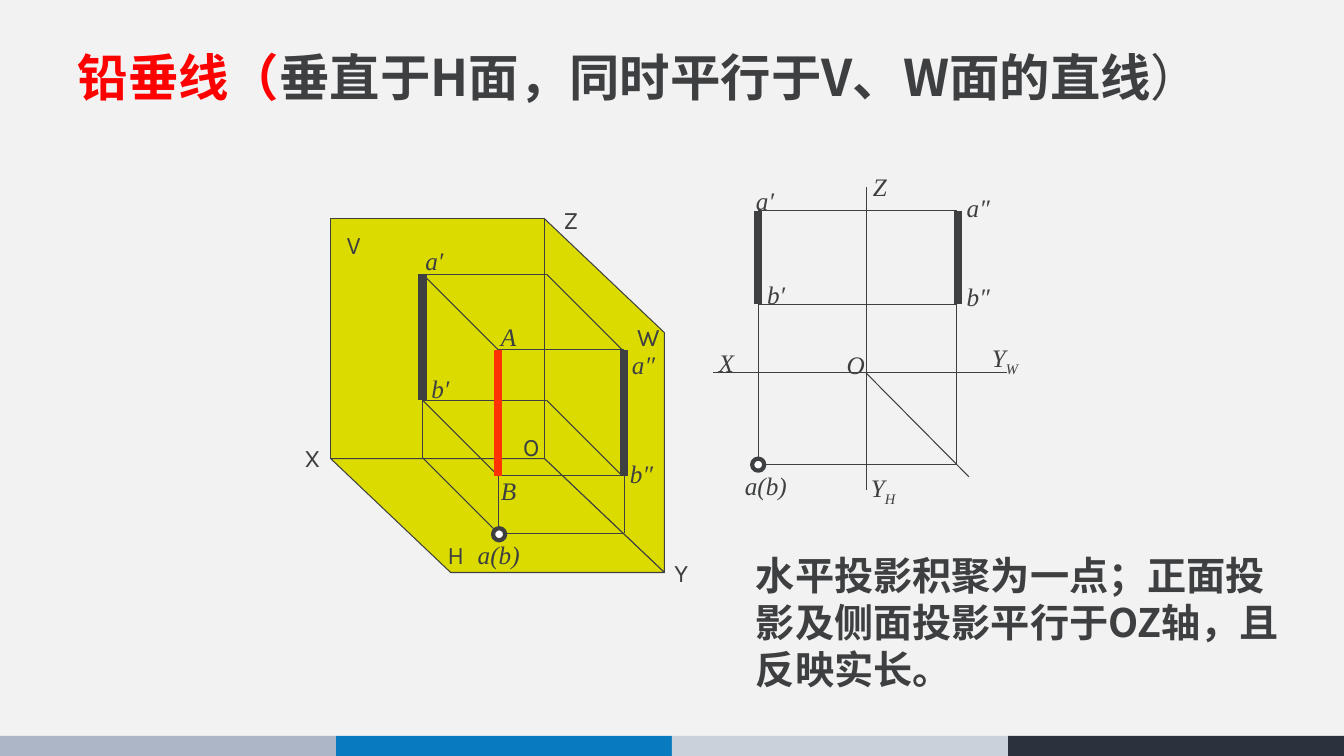
from lxml.etree import SubElement
from pptx import Presentation
from pptx.dml.color import RGBColor
from pptx.enum.shapes import MSO_CONNECTOR, MSO_SHAPE
from pptx.enum.text import MSO_ANCHOR, MSO_AUTO_SIZE, PP_ALIGN
from pptx.oxml.ns import qn
from pptx.util import Inches, Pt

INK, RED, YELLOW, WHITE = "3D3F41", "FF0000", "DBDB00", "FFFFFF"
SANS, SERIF, HAN = "Karla", "Times New Roman", "Noto Sans CJK SC"


def color(code):
    """Turn a hex string into a colour."""
    return RGBColor.from_string(code)


def add_run(para, text, size=18, font=SANS, ink=INK, bold=False, italic=False, base=0):
    """Add a formatted run to a paragraph."""
    run = para.add_run()
    run.text = text
    face = run.font
    face.size, face.name, face.bold, face.italic = Pt(size), font, bold, italic
    face.color.rgb = color(ink)
    props = run._r.get_or_add_rPr()
    SubElement(props, qn("a:ea")).set("typeface", font)
    if base:
        props.set("baseline", str(base * 1000))


def set_frame(frame, pad=0.05, pitch=None):
    """Prepare a wrapped, top-left text frame and return its paragraph."""
    frame.word_wrap = True
    frame.auto_size = MSO_AUTO_SIZE.NONE
    frame.vertical_anchor = MSO_ANCHOR.TOP
    frame.margin_left = frame.margin_right = Inches(0.1)
    frame.margin_top, frame.margin_bottom = Inches(pad), Inches(0.05)
    para = frame.paragraphs[0]
    para.alignment = PP_ALIGN.LEFT
    if pitch:
        para.line_spacing = Pt(pitch)
    return para


def add_label(slide, x, y, text, sub="", width=0.86, **style):
    """Place a one-line label with an optional subscript."""
    box = slide.shapes.add_textbox(Inches(x), Inches(y), Inches(width), Inches(0.4))
    para = set_frame(box.text_frame)
    add_run(para, text, **style)
    if sub:
        add_run(para, sub, base=-25, **style)


def add_form(slide, kind, x, y, width, height, fill, line=None, weight=0.75):
    """Place a flat preset shape."""
    form = slide.shapes.add_shape(kind, Inches(x), Inches(y), Inches(width), Inches(height))
    form.shadow.inherit = False
    form.fill.solid()
    form.fill.fore_color.rgb = color(fill)
    if line:
        form.line.color.rgb = color(line)
        form.line.width = Pt(weight)
    else:
        form.line.fill.background()
    return form


def add_line(slide, left, top, start, end, ink=INK, weight=0.75):
    """Draw a line between two points relative to left and top."""
    line = slide.shapes.add_connector(
        MSO_CONNECTOR.STRAIGHT, Inches(left + start[0]), Inches(top + start[1]),
        Inches(left + end[0]), Inches(top + end[1]))
    line.line.color.rgb = color(ink)
    line.line.width = Pt(weight)
    SubElement(line._element.spPr, qn("a:effectLst"))


def add_dot(slide, x, y):
    """Draw the ring that marks a point view, centred on x and y."""
    add_form(slide, MSO_SHAPE.OVAL, x - 0.06, y - 0.06, 0.12, 0.12, WHITE, INK, 3)


def add_band(slide, left, top, width, height):
    """Draw the four-colour foot band."""
    step = width / 4
    for i, fill in enumerate(("ADB6C7", "087AC0", "CBD1DB", "2A323E")):
        add_form(slide, MSO_SHAPE.RECTANGLE, left + i * step, top, step, height, fill)


def add_title(slide, left, top, width, height):
    """Fill and place the slide title."""
    title = slide.shapes.title
    title.left, title.top = Inches(left), Inches(top)
    title.width, title.height = Inches(width), Inches(height)
    para = set_frame(title.text_frame, 0.11, 42)
    for text, ink, bold in (("铅垂线（", RED, True),
                            ("垂直于H面，同时平行于V、W面的直线", INK, True),
                            ("）", INK, False)):
        add_run(para, text, size=36, font=HAN, ink=ink, bold=bold)


def add_faces(slide, left, top, width, height, run, drop):
    """Draw the V, H and W planes, with the depth edge going run and drop."""
    side = height + drop
    face = add_form(slide, MSO_SHAPE.PARALLELOGRAM, left + width + (run - side) / 2,
                    top + (side - run) / 2, side, run, YELLOW, INK)
    face.rotation = 270
    face.adjustments[0] = drop / run
    floor = add_form(slide, MSO_SHAPE.PARALLELOGRAM, left, top + height,
                     width + run, drop, YELLOW, INK)
    floor.adjustments[0] = run / drop
    floor._element.spPr.xfrm.set("flipH", "1")
    add_form(slide, MSO_SHAPE.RECTANGLE, left, top, width, height, YELLOW, INK)


def add_space(slide, left, top):
    """Draw the line AB in space with its three views."""
    add_faces(slide, left, top, 2.12, 2.38, 1.19, 1.13)
    back, axis, near, side, shift = 0.91, 2.14, 1.66, 2.91, 0.75
    high, low, foot = 0.55, 1.8, 2.37
    lines = [((back, foot), (near, foot + shift)),
             ((near, foot + shift), (side, foot + shift)),
             ((back, low), (back, foot))]
    for x in (near, side):
        lines.append(((x, low + shift), (x, foot + shift)))
    for y in (high, low):
        lines += [((back, y), (axis, y)), ((back, y), (near, y + shift)),
                  ((axis, y), (axis + shift, y + shift)),
                  ((near, y + shift), (side, y + shift))]
    for start, end in lines:
        add_line(slide, left, top, start, end)
    for x, y, ink in ((back, high, INK), (near, high + shift, "FF3300"),
                      (side, high + shift, INK)):
        add_line(slide, left, top, (x, y), (x, y + low - high), ink, 6)
    add_dot(slide, left + near + 0.01, top + foot + shift + 0.01)
    for text, x, y in (("V", 0.06, 0.06), ("W", 2.94, 0.97), ("H", 1.06, 3.13),
                       ("X", -0.36, 2.17), ("Y", 3.31, 3.31), ("Z", 2.21, -0.19),
                       ("O", 1.81, 2.06)):
        add_label(slide, left + x, top + y, text, width=0.44)
    for text, x, y in (("A", 1.59, 0.97), ("B", 1.59, 2.5), ("a′", 0.84, 0.21),
                       ("b′", 0.9, 1.48), ("a″", 2.89, 1.25), ("b″", 2.87, 2.33),
                       ("a(b)", 1.36, 3.13)):
        add_label(slide, left + x, top + y, text, font=SERIF, italic=True)


def add_views(slide, left, top):
    """Draw the unfolded views, with the origin O at left and top."""
    west, east, high, low, plan = -1.07, 0.9, -1.61, -0.68, 0.91
    for start, end in (((-1.52, 0), (1.4, 0)), ((0, -1.84), (0, 1.16)),
                       ((0, 0), (1.02, 1.03)), ((west, high), (east, high)),
                       ((west, low), (east, low)), ((west, plan), (east, plan)),
                       ((west, low), (west, plan)), ((east, low), (east, plan))):
        add_line(slide, left, top, start, end)
    for x in (west, east + 0.01):
        add_line(slide, left, top, (x, high), (x, low), weight=6)
    add_dot(slide, left + west, top + plan)
    for text, sub, x, y in (("Z", "", -0.03, -2.05), ("X", "", -1.56, -0.3),
                            ("O", "", -0.29, -0.28), ("Y", "H", -0.05, 0.94),
                            ("Y", "W", 1.15, -0.35), ("a′", "", -1.19, -1.91),
                            ("b′", "", -1.08, -0.98), ("a″", "", 0.9, -1.84),
                            ("b″", "", 0.9, -0.96), ("a(b)", "", -1.3, 0.92)):
        add_label(slide, left + x, top + y, text, sub, font=SERIF, italic=True)


def add_note(slide, left, top, width, height):
    """Place the summary of the projection rules."""
    box = slide.shapes.add_textbox(Inches(left), Inches(top), Inches(width), Inches(height))
    para = set_frame(box.text_frame, 0.11, 33.6)
    add_run(para, "水平投影积聚为一点；正面投影及侧面投影平行于OZ轴，且反映实长。",
            size=28, font=HAN, bold=True)


def main():
    """Build and save the slide."""
    deck = Presentation()
    deck.slide_width, deck.slide_height = Inches(13.33), Inches(7.5)
    slide = deck.slides.add_slide(deck.slide_layouts[5])
    slide.background.fill.solid()
    slide.background.fill.fore_color.rgb = color("F2F2F2")
    add_band(slide, 0, 7.3, 13.33, 0.2)
    add_title(slide, 0.67, 0.36, 11.87, 1.3)
    add_space(slide, 3.28, 2.17)
    add_views(slide, 8.59, 3.7)
    add_note(slide, 7.4, 5.36, 5.44, 1.51)
    deck.save("out.pptx")


if __name__ == "__main__":
    main()
